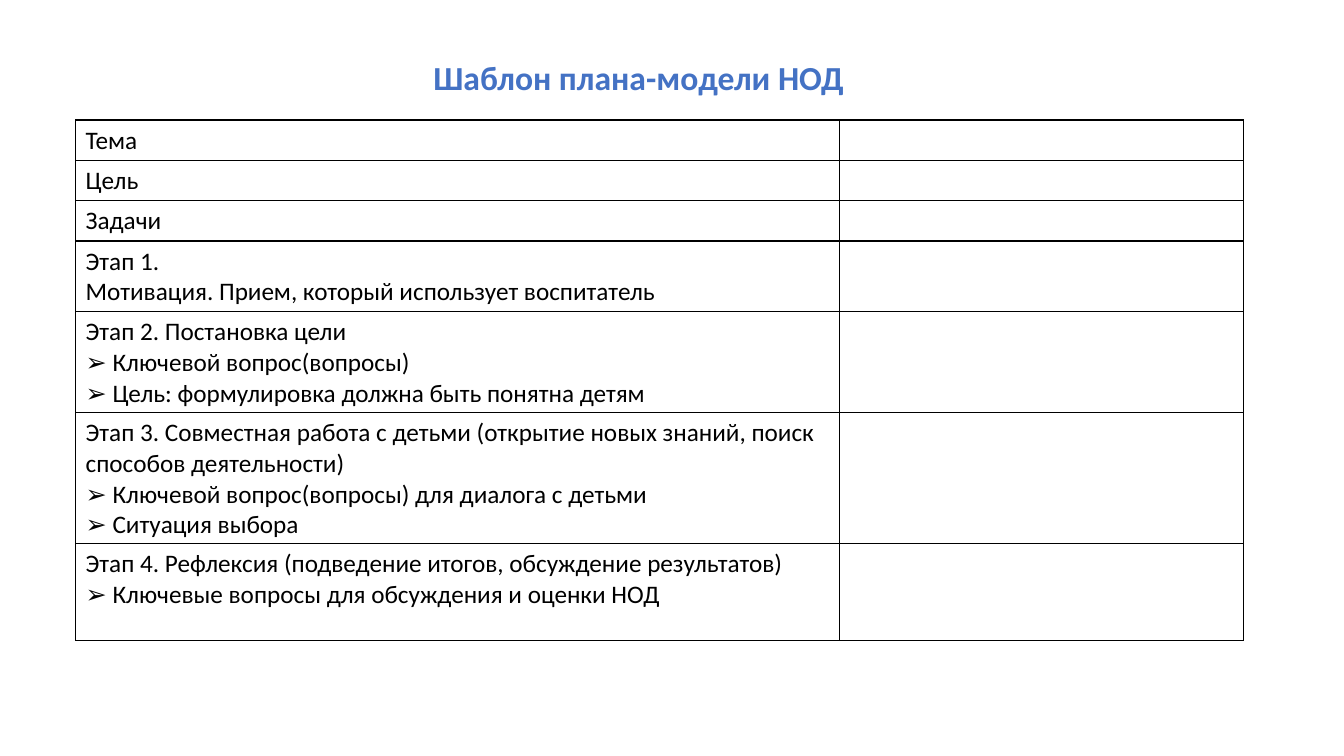
import pptx
import pptx.util
import pptx.dml.color
import pptx.oxml.ns
import lxml.etree

WIDE, HIGH = 13.33, 7.5
FONT = "Calibri"
COLORS = {"title": "4472C4", "text": "000000", "line": "000000", "page": "FFFFFF"}
COLS = [7.58, 4]
PLAN = [
    (0.4, ["Тема"]),
    (0.4, ["Цель"]),
    (0.4, ["Задачи"]),
    (0.7, ["Этап 1.", "Мотивация. Прием, который использует воспитатель"]),
    (1, ["Этап 2. Постановка цели",
         "➢ Ключевой вопрос(вопросы)",
         "➢ Цель: формулировка должна быть понятна детям"]),
    (1.3, ["Этап 3. Совместная работа с детьми (открытие новых знаний, "
           "поиск способов деятельности)",
           "➢ Ключевой вопрос(вопросы) для диалога с детьми",
           "➢ Ситуация выбора"]),
    (0.96, ["Этап 4. Рефлексия (подведение итогов, обсуждение результатов)",
            "➢ Ключевые вопросы для обсуждения и оценки НОД"]),
]


def color(name):
    return pptx.dml.color.RGBColor.from_string(COLORS[name])


def write(frame, lines, size=18, bold=False, tone="text"):
    frame.word_wrap = True
    for i, line in enumerate(lines):
        para = frame.paragraphs[0] if i == 0 else frame.add_paragraph()
        run = para.add_run()
        run.text = line
        run.font.name = FONT
        run.font.size = pptx.util.Pt(size)
        run.font.bold = bold
        run.font.color.rgb = color(tone)


def style(cell):
    """Give a cell a plain fill and a thin line on each side."""
    props = cell._tc.get_or_add_tcPr()
    for side in ("lnL", "lnR", "lnT", "lnB"):
        line = lxml.etree.SubElement(props, pptx.oxml.ns.qn("a:" + side),
                                     w=str(pptx.util.Pt(1)))
        fill = lxml.etree.SubElement(line, pptx.oxml.ns.qn("a:solidFill"))
        lxml.etree.SubElement(fill, pptx.oxml.ns.qn("a:srgbClr"),
                              val=COLORS["line"])
    cell.fill.solid()
    cell.fill.fore_color.rgb = color("page")


def add_title(slide, box):
    shape = slide.shapes.add_textbox(*map(pptx.util.Inches, box))
    write(shape.text_frame, ["Шаблон плана-модели НОД"],
          size=24, bold=True, tone="title")


def add_plan(slide, left, top):
    box = (left, top, sum(COLS), sum(high for high, _ in PLAN))
    table = slide.shapes.add_table(len(PLAN), len(COLS),
                                   *map(pptx.util.Inches, box)).table
    table.first_row = table.horz_banding = False
    for col, wide in zip(table.columns, COLS):
        col.width = pptx.util.Inches(wide)
    for row, (high, lines) in zip(table.rows, PLAN):
        row.height = pptx.util.Inches(high)
        for cell in row.cells:
            style(cell)
        write(row.cells[0].text_frame, lines)


def main():
    deck = pptx.Presentation()
    deck.slide_width = pptx.util.Inches(WIDE)
    deck.slide_height = pptx.util.Inches(HIGH)
    slide = deck.slides.add_slide(deck.slide_layouts[6])
    add_title(slide, (4.2, 0.52, 4.3, 0.5))
    add_plan(slide, 0.75, 1.19)
    deck.save("out.pptx")


if __name__ == "__main__":
    main()
